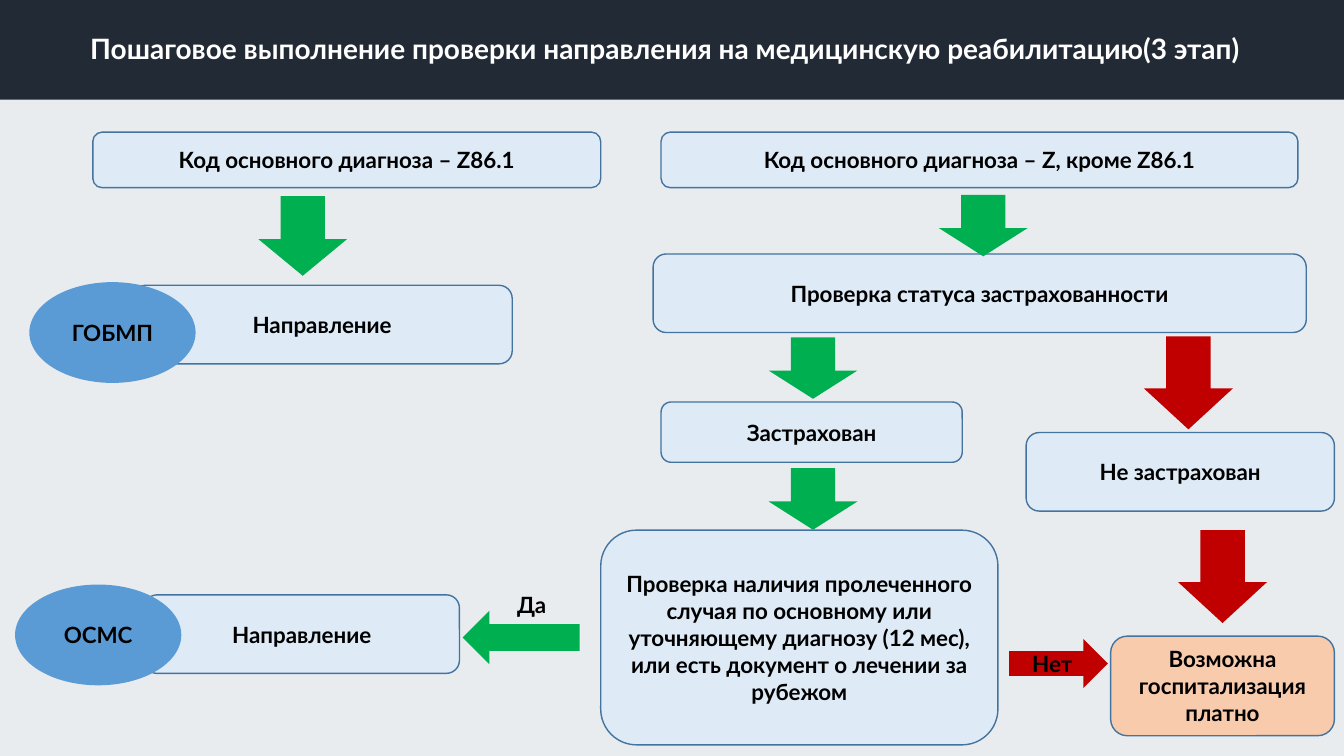
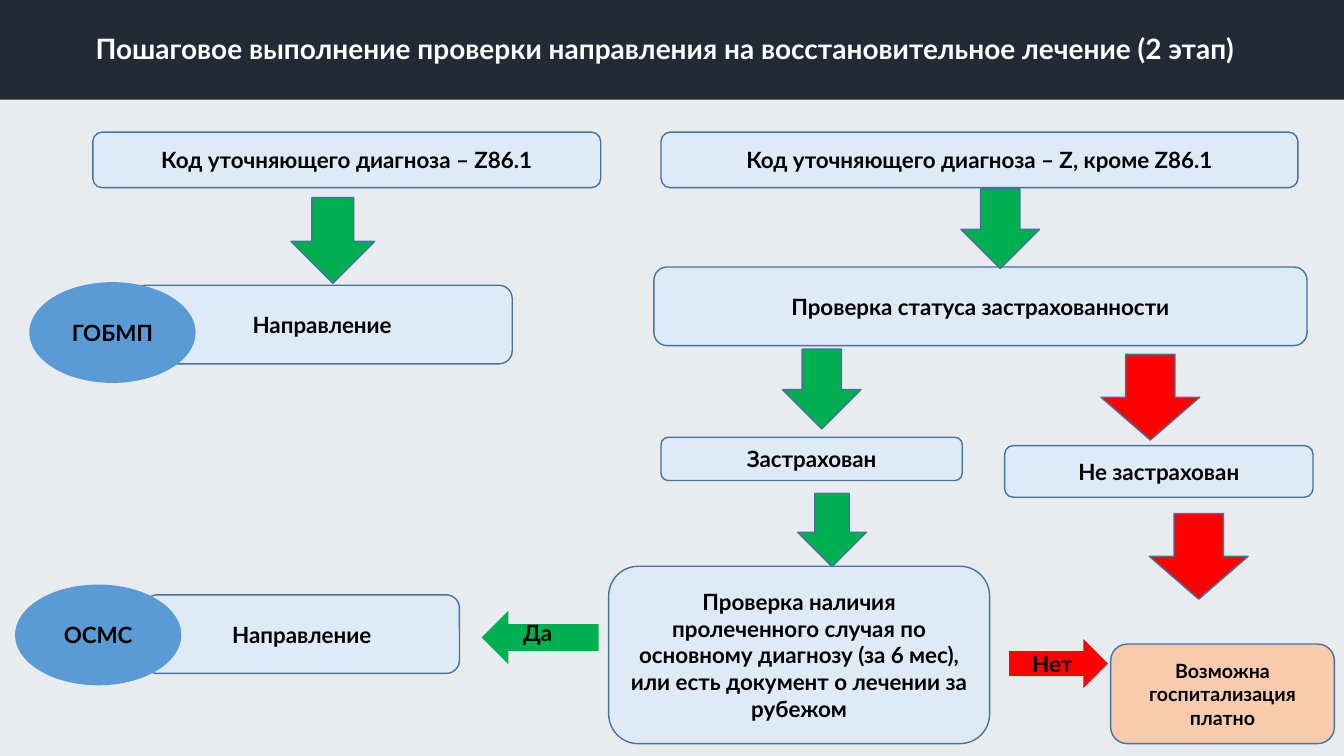
from lxml import etree
from pptx import Presentation
from pptx.dml.color import RGBColor
from pptx.enum import shapes, text
from pptx.oxml.ns import qn
from pptx.util import Cm, Pt

FONT = "Lato"
NAVY = RGBColor(0x22, 0x2A, 0x35)
WASH = RGBColor(0x2C, 0x4A, 0x64)
PALE = RGBColor(0xDE, 0xEB, 0xF7)
BLUE = RGBColor(0x5B, 0x9B, 0xD5)
OUTLINE = RGBColor(0x43, 0x73, 0x9E)
PEACH = RGBColor(0xF8, 0xCB, 0xAD)
GREEN = RGBColor(0x00, 0xB0, 0x50)
DARK_RED = RGBColor(0xC0, 0x00, 0x00)
RED = RGBColor(0xFF, 0x00, 0x00)
BLACK = RGBColor(0, 0, 0)
WHITE = RGBColor(0xFF, 0xFF, 0xFF)

KIND = shapes.MSO_SHAPE
WIDTH, HEIGHT, BAND_HEIGHT = 33.87, 19.05, 2.51
REFERRAL = "Направление"
OUTCOME = "Возможна госпитализация платно"

# Parts at the same place on both slides; boxes are left, top, width, height in cm
CODE_BOXES = [(2.34, 3.33, 12.8, 1.4), (16.66, 3.33, 16.05, 1.4)]
REFERRALS = [(3.33, 7.19, 9.58, 1.98), (3.63, 14.99, 7.95, 1.98)]
FUNDS = [("ГОБМП", (0.74, 7.11, 4.19, 2.54)), ("ОСМС", (0.38, 14.73, 4.19, 2.54))]
NO_ARROW = (25.43, 16.1, 2.49, 1.24)

# Each slide's own content; down arrows are centre x, top, width, height
SLIDES = [
    {
        "title": "Пошаговое выполнение проверки направления на медицинскую реабилитацию(3 этап)",
        "codes": ["Код основного диагноза – Z86.1",
                  "Код основного диагноза – Z, кроме Z86.1"],
        "steps": [
            ("Проверка статуса застрахованности", (16.46, 6.4, 16.46, 1.98)),
            ("Застрахован", (16.66, 10.13, 7.59, 1.52)),
            ("Не застрахован", (25.86, 10.9, 7.77, 1.98)),
            ("Проверка наличия пролеченного случая по основному или уточняющему "
             "диагнозу (12 мес), или есть документ о лечении за рубежом",
             (15.14, 13.36, 10.01, 5.41)),
        ],
        "outcome": ((27.99, 16.03, 5.64, 2.51), 16),
        "yes_arrow": (11.66, 15.39, 2.95, 1.35),
        "yes_label": (12.78, 14.76, 1.6, 0.94),
        "stop": DARK_RED,
        "arrow_line": None,
        "arrow_head": 0.46,
        "go_arrows": [(7.63, 4.94, 2.24, 2.01), (24.78, 4.91, 2.24, 1.55),
                      (20.49, 8.5, 2.24, 1.55), (20.49, 11.8, 2.24, 1.55)],
        "stop_arrows": [(29.95, 8.48, 2.24, 2.34), (30.81, 13.36, 2.24, 2.34)],
    },
    {
        "title": "Пошаговое выполнение проверки направления на восстановительное лечение (2 этап)",
        "codes": ["Код уточняющего диагноза – Z86.1",
                  "Код уточняющего диагноза – Z, кроме Z86.1"],
        "steps": [
            ("Проверка статуса застрахованности", (16.48, 6.73, 16.46, 1.98)),
            ("Застрахован", (16.66, 11.02, 7.59, 1.09)),
            ("Не застрахован", (25.32, 11.23, 7.77, 1.3)),
            ("Проверка наличия пролеченного случая по основному диагнозу "
             "(за 6 мес), или есть документ о лечении за рубежом",
             (15.34, 14.27, 9.6, 4.47)),
        ],
        "outcome": ((27.99, 16.23, 5.64, 2.51), 14),
        "yes_arrow": (12.14, 15.39, 2.95, 1.35),
        "yes_label": (12.93, 15.47, 1.6, 0.94),
        "stop": RED,
        "arrow_line": OUTLINE,
        "arrow_head": 0.5,
        "go_arrows": [(8.39, 4.98, 2.11, 2.16), (25.21, 4.76, 1.98, 2.01),
                      (20.71, 8.8, 1.98, 2.01), (20.97, 12.43, 1.73, 1.85)],
        "stop_arrows": [(28.99, 8.93, 2.49, 2.16), (30.21, 12.94, 2.49, 2.16)],
    },
]


def write(frame, words, size=16, color=BLACK, align=text.PP_ALIGN.CENTER):
    frame.text = words
    frame.word_wrap = True
    line = frame.paragraphs[0]
    line.alignment = align
    line.font.name = FONT
    line.font.size = Pt(size)
    line.font.bold = True
    line.font.color.rgb = color
    return line


def add_part(slide, kind, box, fill, words="", line=None, size=16):
    part = slide.shapes.add_shape(kind, *map(Cm, box))
    part.shadow.inherit = False
    part.fill.solid()
    part.fill.fore_color.rgb = fill
    if line is None:
        part.line.fill.background()
    else:
        part.line.color.rgb = line
        part.line.width = Pt(1)
    if words:
        write(part.text_frame, words, size)
        part.text_frame.vertical_anchor = text.MSO_ANCHOR.MIDDLE
    return part


def add_frame(slide, title_words):
    """Tinted background, dark band and title."""
    wash = add_part(slide, KIND.RECTANGLE, (0, 0, WIDTH, HEIGHT), WASH)
    tint = wash._element.spPr.find(".//" + qn("a:srgbClr"))
    etree.SubElement(tint, qn("a:alpha")).set("val", "10000")
    add_part(slide, KIND.RECTANGLE, (0, 0, WIDTH, BAND_HEIGHT), NAVY)

    title = slide.shapes.title
    title.left, title.top, title.width, title.height = map(Cm, (0, 0.46, 33.53, 1.6))
    write(title.text_frame, title_words, 20, WHITE).line_spacing = 0.9
    title.text_frame.vertical_anchor = text.MSO_ANCHOR.MIDDLE
    title.text_frame.auto_size = text.MSO_AUTO_SIZE.NONE
    slide.shapes._spTree.append(title._element)  # bring in front of the band


def build_slide(deck, content):
    slide = deck.slides.add_slide(deck.slide_layouts[5])
    add_frame(slide, content["title"])

    # Step boxes
    steps = list(zip(content["codes"], CODE_BOXES))
    steps += [(REFERRAL, box) for box in REFERRALS] + content["steps"]
    for words, box in steps:
        add_part(slide, KIND.ROUNDED_RECTANGLE, box, PALE, words, OUTLINE)
    outcome_box, outcome_size = content["outcome"]
    add_part(slide, KIND.ROUNDED_RECTANGLE, outcome_box, PEACH, OUTCOME, OUTLINE, outcome_size)

    # Funding sources
    for words, box in FUNDS:
        add_part(slide, KIND.OVAL, box, BLUE, words)

    # Yes and no branches
    add_part(slide, KIND.LEFT_ARROW, content["yes_arrow"], GREEN)
    yes = slide.shapes.add_textbox(*map(Cm, content["yes_label"]))
    write(yes.text_frame, "Да", align=text.PP_ALIGN.LEFT)
    add_part(slide, KIND.RIGHT_ARROW, NO_ARROW, content["stop"], "Нет")

    # Down arrows
    for color, arrows in ((GREEN, content["go_arrows"]),
                          (content["stop"], content["stop_arrows"])):
        for center, top, width, height in arrows:
            arrow = add_part(slide, KIND.DOWN_ARROW,
                             (center - width / 2, top, width, height),
                             color, line=content["arrow_line"])
            arrow.adjustments[1] = content["arrow_head"]


def main():
    deck = Presentation()
    deck.slide_width, deck.slide_height = Cm(WIDTH), Cm(HEIGHT)
    for content in SLIDES:
        build_slide(deck, content)
    deck.save("out.pptx")


if __name__ == "__main__":
    main()
